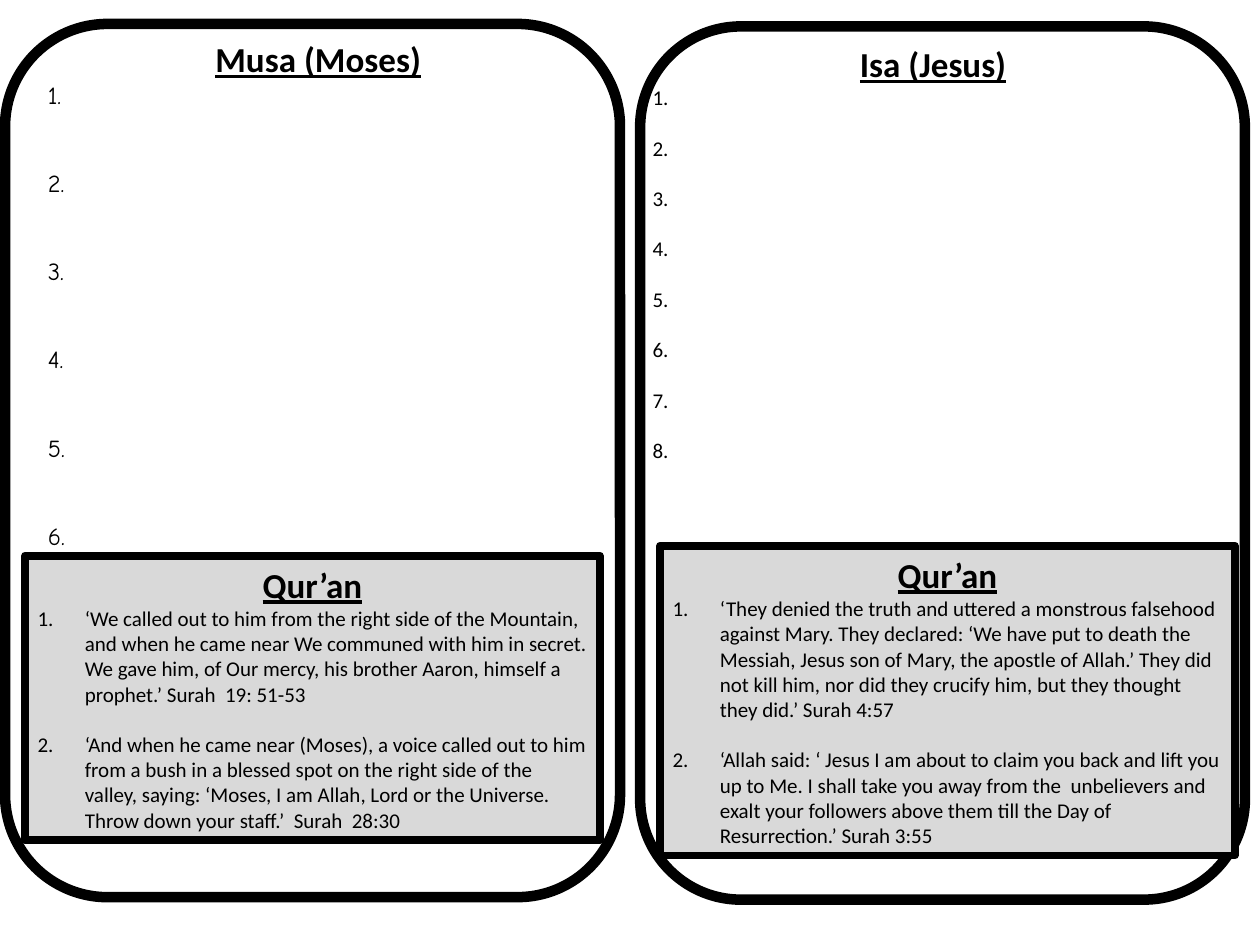
from dataclasses import dataclass

from lxml.etree import SubElement
from pptx import Presentation
from pptx.dml.color import RGBColor
from pptx.enum.shapes import MSO_SHAPE
from pptx.enum.text import MSO_ANCHOR, PP_ALIGN
from pptx.oxml.ns import qn
from pptx.util import Pt


@dataclass(frozen=True)
class Theme:
    ink: RGBColor = RGBColor(0, 0, 0)
    paper: RGBColor = RGBColor(255, 255, 255)
    quote_fill: RGBColor = RGBColor(0xD9, 0xD9, 0xD9)
    font: str = "Calibri"
    hand_font: str = "Comic Neue"
    title_size: int = 20
    quote_size: int = 12
    quote_gap: float = 14.4
    quote_indent: int = 27
    frame_line: float = 6
    quote_line: float = 4.5


THEME = Theme()

PROPHETS = [
    {
        "title": "Musa (Moses)",
        "count": 6,
        "number_font": THEME.hand_font,
        "number_size": 14,
        "number_gap": 33.6,
        "frame": (2.9, 13.7, 351.4, 499),
        "notes": (20.2, 18, 323.3, 337),
        "quote_box": (14.4, 317.5, 328.3, 162.7),
        "quotes": [
            "‘We called out to him from the right side of the Mountain, and when he came near "
            "We communed with him in secret. We gave him, of Our mercy, his brother Aaron, "
            "himself a prophet.’ Surah  19: 51-53",
            "‘And when he came near (Moses), a voice called out to him from a bush in a blessed "
            "spot on the right side of the valley, saying: ‘Moses, I am Allah, Lord or the "
            "Universe. Throw down your staff.’  Surah  28:30",
        ],
    },
    {
        "title": "Isa (Jesus)",
        "count": 8,
        "number_font": THEME.font,
        "number_size": 12,
        "number_gap": 14.4,
        "frame": (365.8, 15.1, 345.6, 499),
        "notes": (365.8, 20.9, 334.8, 278.6),
        "quote_box": (377.3, 311.8, 328.3, 177.1),
        "quotes": [
            "‘They denied the truth and uttered a monstrous falsehood against Mary. They "
            "declared: ‘We have put to death the Messiah, Jesus son of Mary, the apostle of "
            "Allah.’ They did not kill him, nor did they crucify him, but they thought they "
            "did.’ Surah 4:57",
            "‘Allah said: ‘ Jesus I am about to claim you back and lift you up to Me. I shall "
            "take you away from the  unbelievers and exalt your followers above them till the "
            "Day of Resurrection.’ Surah 3:55",
        ],
    },
]
QUOTE_TITLE = "Qur’an"


def points(box):
    return [Pt(length) for length in box]


def add_panel(slide, preset, box, fill, line_width):
    panel = slide.shapes.add_shape(preset, *points(box))
    panel.shadow.inherit = False
    panel.fill.solid()
    panel.fill.fore_color.rgb = fill
    panel.line.color.rgb = THEME.ink
    panel.line.width = Pt(line_width)
    return panel


def style(paragraph, size, font=THEME.font, heading=False):
    paragraph.alignment = PP_ALIGN.CENTER if heading else PP_ALIGN.LEFT
    for run in paragraph.runs:
        run.font.name = font
        run.font.size = Pt(size)
        run.font.bold = run.font.underline = heading
        run.font.color.rgb = THEME.ink


def write_list(frame, title, items, size, font, gap):
    frame.word_wrap = True
    frame.text = title
    style(frame.paragraphs[0], THEME.title_size, heading=True)
    for index, item in enumerate(items):
        entry = frame.add_paragraph()
        entry.text = item
        entry.space_before = Pt(gap if index else 0)
        style(entry, size, font)
    return frame.paragraphs[1:]


def number(paragraph):
    properties = paragraph._p.get_or_add_pPr()
    indent = Pt(THEME.quote_indent)
    properties.set("marL", str(indent))
    properties.set("indent", str(-indent))
    SubElement(properties, qn("a:buFont"), typeface="+mj-lt")
    SubElement(properties, qn("a:buAutoNum"), type="arabicPeriod")


def add_notes(slide, prophet):
    notes = slide.shapes.add_textbox(*points(prophet["notes"]))
    labels = [f"{n}." for n in range(1, prophet["count"] + 1)]
    write_list(notes.text_frame, prophet["title"], labels, prophet["number_size"],
               prophet["number_font"], prophet["number_gap"])


def add_quotes(slide, prophet):
    panel = add_panel(slide, MSO_SHAPE.RECTANGLE, prophet["quote_box"],
                      THEME.quote_fill, THEME.quote_line)
    panel.text_frame.vertical_anchor = MSO_ANCHOR.MIDDLE
    quotes = write_list(panel.text_frame, QUOTE_TITLE, prophet["quotes"],
                        THEME.quote_size, THEME.font, THEME.quote_gap)
    for quote in quotes:
        number(quote)


def main():
    deck = Presentation()
    deck.slide_width, deck.slide_height = Pt(720), Pt(540)
    slide = deck.slides.add_slide(deck.slide_layouts[6])
    for prophet in PROPHETS:
        add_panel(slide, MSO_SHAPE.ROUNDED_RECTANGLE, prophet["frame"],
                  THEME.paper, THEME.frame_line)
    for prophet in reversed(PROPHETS):
        add_notes(slide, prophet)
    for prophet in PROPHETS:
        add_quotes(slide, prophet)
    deck.save("out.pptx")


if __name__ == "__main__":
    main()
